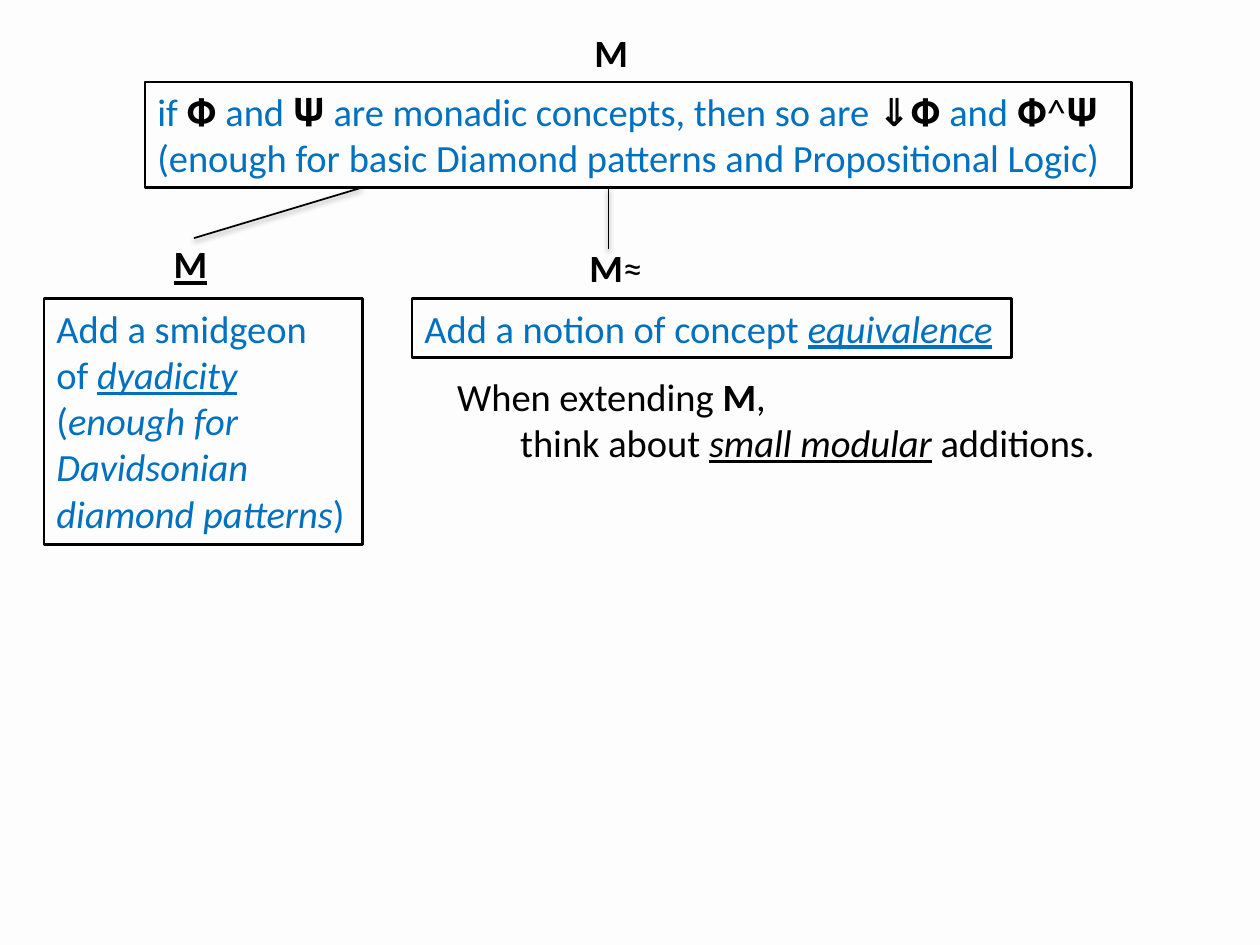
from lxml import etree
from pptx import Presentation
from pptx.dml.color import RGBColor
from pptx.enum.shapes import MSO_CONNECTOR, MSO_SHAPE
from pptx.enum.text import MSO_ANCHOR, MSO_AUTO_SIZE, PP_ALIGN
from pptx.oxml.ns import qn
from pptx.util import Inches, Pt

RECT = MSO_SHAPE.RECTANGLE
STRAIGHT = MSO_CONNECTOR.STRAIGHT
TOP = MSO_ANCHOR.TOP
LEFT = PP_ALIGN.LEFT
GROW = MSO_AUTO_SIZE.SHAPE_TO_FIT_TEXT

COLORS = {"back": "FDFDFD", "black": "000000", "blue": "0070C0"}
FONT, SIZE = "Calibri", 22

# Each paragraph is a list of (text, marks):
# k = black, b = bold, i = italic, u = underlined
LABELS = [
    ((4.62, 0.18, 0.76, 0.47), [[("M", "b")]]),
    ((1.28, 1.86, 0.51, 0.47), [[("M", "bu"), (" ", "")]]),
    ((4.58, 1.89, 0.63, 0.47), [[("M", "b"), ("≈", "")]]),
    ((3.53, 2.91, 5.29, 0.84), [
        [("When extending ", ""), ("M", "b"), (",", "")],
        [("\tthink about ", ""), ("small modular", "iu"), (" ", "i"),
         ("additions.", "")],
    ]),
]
BOXES = [
    ((1.15, 0.65, 7.83, 0.84), [
        [("if ", ""), ("𝚽 ", "k"), ("and ", ""), ("𝚿 ", "k"),
         ("are monadic concepts, then so are ", ""), ("⇓", "kb"),
         ("𝚽 ", "k"), ("and ", ""), ("𝚽^𝚿", "k")],
        [("(enough for basic Diamond patterns and Propositional Logic)", "")],
    ]),
    ((0.35, 2.37, 2.53, 1.95), [
        [("Add a smidgeon", "")],
        [("of ", ""), ("dyadicity", "iu")],
        [("(", ""), ("enough for Davidsonian diamond patterns", "i"),
         (")", "")],
    ]),
    ((3.27, 2.37, 4.76, 0.47), [
        [("Add a notion of concept ", ""), ("equivalence", "iu"), (" ", "")],
    ]),
]
BRANCHES = [(1.54, 1.89, 2.87, 1.49), (4.83, 1.49, 4.83, 1.98)]


def color(name):
    return RGBColor.from_string(COLORS[name])


def write(shape, paras, tone):
    frame = shape.text_frame
    frame.word_wrap = True
    frame.auto_size = GROW
    frame.vertical_anchor = TOP
    for n, runs in enumerate(paras):
        para = frame.add_paragraph() if n else frame.paragraphs[0]
        para.alignment = LEFT
        para.font.name = FONT
        para.font.size = Pt(SIZE)
        for text, marks in runs:
            run = para.add_run()
            run.text = text
            font = run.font
            font.name = FONT
            font.size = Pt(SIZE)
            font.color.rgb = color("black" if "k" in marks else tone)
            font.bold = "b" in marks
            font.italic = "i" in marks
            font.underline = "u" in marks


def add_label(slide, place, paras):
    write(slide.shapes.add_textbox(*map(Inches, place)), paras, "black")


def add_box(slide, place, paras):
    box = slide.shapes.add_shape(RECT, *map(Inches, place))
    box.shadow.inherit = False
    box.fill.background()
    box.line.color.rgb = color("black")
    box.line.width = Pt(1.5)
    write(box, paras, "blue")


def add_branch(slide, ends):
    """Draw a thin line with a soft shadow below it."""
    line = slide.shapes.add_connector(STRAIGHT, *map(Inches, ends))
    line.line.color.rgb = color("black")
    line.line.width = Pt(1)
    props = line._element.spPr
    effects = etree.SubElement(props, qn("a:effectLst"))
    shade = etree.SubElement(
        effects, qn("a:outerShdw"), blurRad=str(Pt(3.1)), dist=str(Pt(1.6)),
        dir=str(90 * 60000), rotWithShape="0")
    tint = etree.SubElement(shade, qn("a:srgbClr"), val=COLORS["black"])
    etree.SubElement(tint, qn("a:alpha"), val="38000")


def main():
    deck = Presentation()
    deck.slide_width, deck.slide_height = Inches(10), Inches(7.5)
    slide = deck.slides.add_slide(deck.slide_layouts[6])
    fill = slide.background.fill
    fill.solid()
    fill.fore_color.rgb = color("back")
    for ends in BRANCHES:
        add_branch(slide, ends)
    for place, paras in BOXES:
        add_box(slide, place, paras)
    for place, paras in LABELS:
        add_label(slide, place, paras)
    deck.save("out.pptx")


if __name__ == "__main__":
    main()
